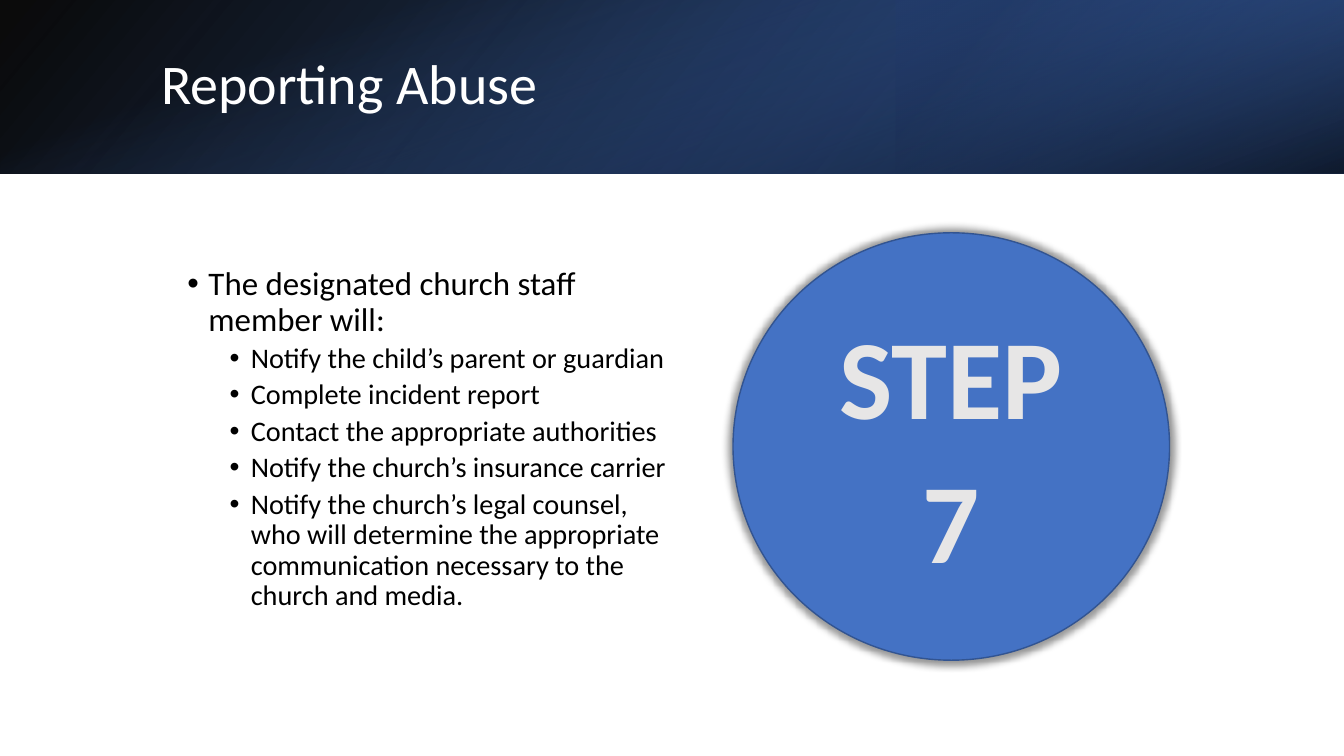
"""Build the Reporting Abuse slide with a shaded banner, a bullet list and a step badge."""
from dataclasses import dataclass

from lxml.etree import SubElement
from pptx import Presentation
from pptx.dml.color import RGBColor
from pptx.enum.shapes import MSO_SHAPE
from pptx.enum.text import MSO_ANCHOR, MSO_AUTO_SIZE, PP_ALIGN
from pptx.oxml.ns import qn
from pptx.util import Inches, Pt

WIDE, HIGH = Inches(13.33), Inches(7.5)
BAND = 22.93


@dataclass(frozen=True)
class Theme:
    font: str = "Calibri"
    white: str = "FFFFFF"
    black: str = "000000"
    blue: str = "4472C4"
    deep: str = "2F5597"
    navy: str = "203864"
    edge: str = "325491"
    pale: str = "E7E6E6"
    head: float = 40
    lead: float = 23.5
    item: float = 20.2
    step: float = 80.6


THEME = Theme()
LEAD = "The designated church staff member will:"
TASKS = [
    "Notify the child’s parent or guardian",
    "Complete incident report",
    "Contact the appropriate authorities",
    "Notify the church’s insurance carrier",
    "Notify the church’s legal counsel, who will determine the appropriate "
    "communication necessary to the church and media.",
]


def place(left, top, width, height):
    return (int(WIDE * left / 100), int(HIGH * top / 100),
            int(WIDE * width / 100), int(HIGH * height / 100))


def style(para, size, color, bold=False):
    para.font.name = THEME.font
    para.font.size = Pt(size)
    para.font.bold = bold
    para.font.color.rgb = RGBColor.from_string(color)


def add_band(slide, left, stops, angle, turn=0, flip=False):
    x, y, width, height = place(left, 0, 100 - left, BAND)
    if turn == 90:
        x, y = x + (width - height) // 2, y + (height - width) // 2
        width, height = height, width
    band = slide.shapes.add_shape(MSO_SHAPE.RECTANGLE, x, y, width, height)
    band.rotation = turn
    band.shadow.inherit = False
    band.line.fill.background()
    props = band._element.spPr
    if flip:
        props.find(qn("a:xfrm")).set("flipH", "1")
    band.fill.gradient()
    band.fill.gradient_angle = 360 - angle
    for stop, (share, color, _) in zip(band.fill.gradient_stops, stops):
        stop.position = share / 100
        stop.color.rgb = RGBColor.from_string(color)
    for color, (_, _, alpha) in zip(props.iter(qn("a:srgbClr")), stops):
        SubElement(color, qn("a:alpha"), val=str(alpha * 1000))


def add_title(slide, text):
    title = slide.shapes.title
    slide.shapes._spTree.append(title._element)
    title.left, title.top, title.width, title.height = place(11.25, 5.07, 82.37, 12.8)
    frame = title.text_frame
    frame.text = text
    frame.auto_size = MSO_AUTO_SIZE.NONE
    frame.vertical_anchor = MSO_ANCHOR.MIDDLE
    para = frame.paragraphs[0]
    para.alignment = PP_ALIGN.LEFT
    para.line_spacing = 0.9
    style(para, THEME.head, THEME.white)


def add_point(para, text, level, size, gap):
    para.text = text
    para.level = level
    para.line_spacing = 0.9
    para.space_before = Pt(gap)
    style(para, size, THEME.black)
    props = para._p.get_or_add_pPr()
    props.set("marL", str(Inches(0.21 + 0.42 * level)))
    props.set("indent", str(Inches(-0.21)))
    SubElement(props, qn("a:buFont"), typeface="Arial")
    SubElement(props, qn("a:buChar"), char="•")


def add_list(slide, lead, tasks):
    frame = slide.shapes.add_textbox(*place(13.2, 34.67, 37.73, 57.2)).text_frame
    frame.word_wrap = True
    add_point(frame.paragraphs[0], lead, 0, THEME.lead, 8.4)
    for task in tasks:
        add_point(frame.add_paragraph(), task, 1, THEME.item, 4.2)


def add_glow(shape):
    shape.shadow.inherit = False
    effects = shape._element.spPr.find(qn("a:effectLst"))
    glow = SubElement(effects, qn("a:outerShdw"), blurRad=str(Pt(5)),
                      sx="102000", sy="102000", algn="ctr", rotWithShape="0")
    color = SubElement(glow, qn("a:srgbClr"), val=THEME.black)
    SubElement(color, qn("a:alpha"), val="40000")


def add_badge(slide, lines):
    badge = slide.shapes.add_shape(MSO_SHAPE.OVAL, *place(54.54, 30.8, 32.48, 56.53))
    badge.fill.solid()
    badge.fill.fore_color.rgb = RGBColor.from_string(THEME.blue)
    badge.line.color.rgb = RGBColor.from_string(THEME.edge)
    badge.line.width = Pt(1)
    add_glow(badge)
    frame = badge.text_frame
    frame.text = "\n".join(lines)
    frame.word_wrap = True
    frame.vertical_anchor = MSO_ANCHOR.MIDDLE
    for para in frame.paragraphs:
        para.alignment = PP_ALIGN.CENTER
        para.space_after = Pt(6)
        style(para, THEME.step, THEME.pale, bold=True)


def main():
    deck = Presentation()
    deck.slide_width, deck.slide_height = WIDE, HIGH
    slide = deck.slides.add_slide(deck.slide_layouts[5])
    add_band(slide, 0, [(0, THEME.black, 96), (100, THEME.deep, 100)], 140, flip=True)
    add_band(slide, 66.67, [(19, THEME.navy, 68), (100, THEME.blue, 79)], 320,
             turn=180, flip=True)
    add_band(slide, 0, [(23, THEME.blue, 0), (99, THEME.black, 74)], 340, turn=90)
    add_title(slide, "Reporting Abuse")
    add_list(slide, LEAD, TASKS)
    add_badge(slide, ["STEP", "7"])
    deck.save("out.pptx")


if __name__ == "__main__":
    main()
